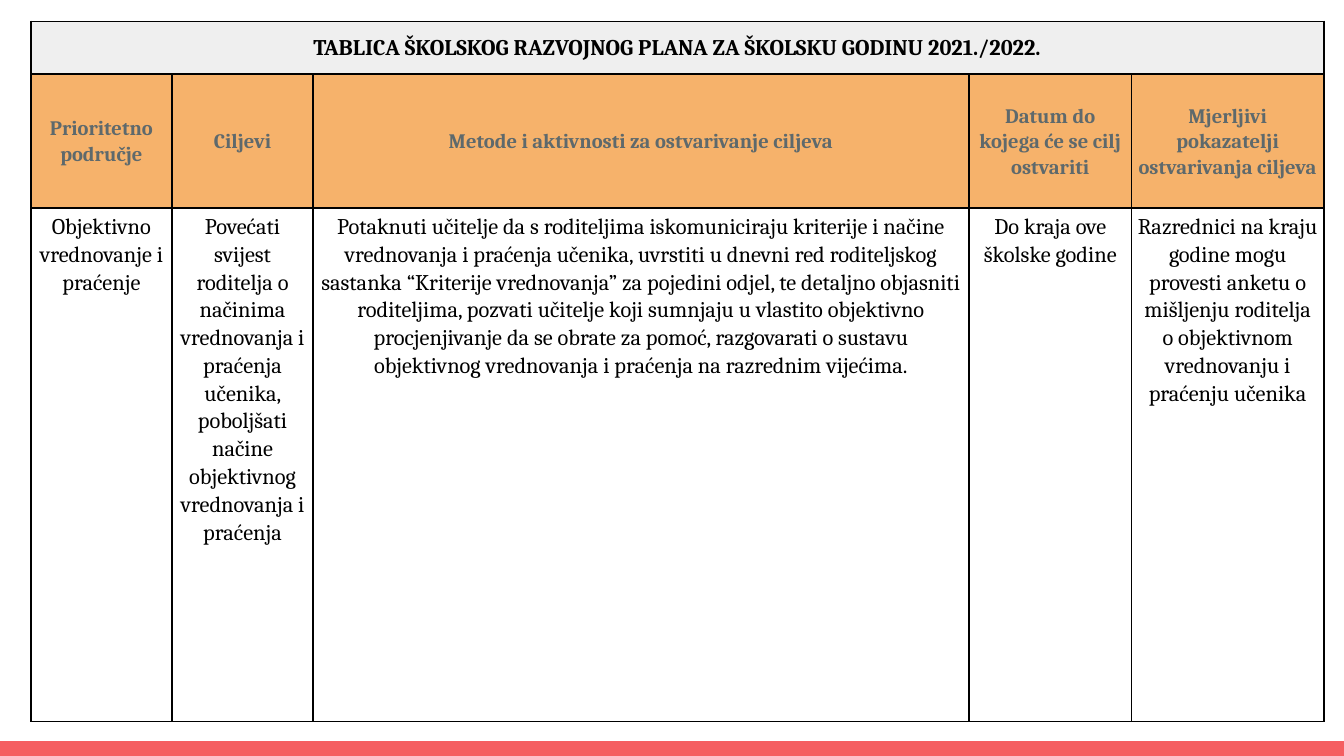
from dataclasses import dataclass

from lxml import etree
from pptx import Presentation, util as u
from pptx.dml.color import RGBColor
from pptx.enum import shapes, text
from pptx.oxml.ns import qn


@dataclass(frozen=True)
class Theme:
    """Colours, font and type sizes of the slide."""
    font: str = "Cambria"
    ink: str = "000000"
    muted: str = "5E696C"
    banner: str = "EFEFEF"
    heading: str = "F6B26B"
    paper: str = "FFFFFF"
    accent: str = "F55E61"
    body_size: float = 12
    heading_size: float = 11
    border: float = 1


THEME = Theme()
WIDTH = 10
HEIGHT = WIDTH * 9 / 16
LEFT, TOP = 0.23, 0.16
COLUMNS = (1.05, 1.05, 4.88, 1.21, 1.43)
ROWS = (0.39, 1, 3.82)
STRIP = 0.11

TITLE = "TABLICA ŠKOLSKOG RAZVOJNOG PLANA ZA ŠKOLSKU GODINU 2021./2022."
HEADINGS = (
    "Prioritetno područje",
    "Ciljevi",
    "Metode i aktivnosti za ostvarivanje ciljeva",
    "Datum do kojega će se cilj ostvariti",
    "Mjerljivi pokazatelji ostvarivanja ciljeva",
)
PLAN = (
    "Objektivno vrednovanje i praćenje",
    "Povećati svijest roditelja o načinima vrednovanja i praćenja učenika, "
    "poboljšati načine objektivnog vrednovanja i praćenja",
    "Potaknuti učitelje da s roditeljima iskomuniciraju kriterije i načine "
    "vrednovanja i praćenja učenika, uvrstiti u dnevni red roditeljskog "
    "sastanka “Kriterije vrednovanja” za pojedini odjel, te detaljno objasniti "
    "roditeljima, pozvati učitelje koji sumnjaju u vlastito objektivno "
    "procjenjivanje da se obrate za pomoć, razgovarati o sustavu objektivnog "
    "vrednovanja i praćenja na razrednim vijećima.",
    "Do kraja ove školske godine",
    "Razrednici na kraju godine mogu provesti anketu o mišljenju roditelja "
    "o objektivnom vrednovanju i praćenju učenika",
)


def add_strip(slide):
    """Draw the coloured strip along the bottom edge."""
    strip = slide.shapes.add_shape(
        shapes.MSO_SHAPE.RECTANGLE, 0, u.Inches(HEIGHT - STRIP),
        u.Inches(WIDTH), u.Inches(STRIP))
    strip.shadow.inherit = False
    strip.fill.solid()
    strip.fill.fore_color.rgb = RGBColor.from_string(THEME.accent)
    strip.line.fill.background()


def add_grid(slide):
    """Add the empty plan table with its column and row sizes."""
    grid = slide.shapes.add_table(
        len(ROWS), len(COLUMNS), u.Inches(LEFT), u.Inches(TOP),
        u.Inches(sum(COLUMNS)), u.Inches(sum(ROWS))).table
    grid.first_row = grid.horz_banding = False
    for column, width in zip(grid.columns, COLUMNS):
        column.width = u.Inches(width)
    for row, height in zip(grid.rows, ROWS):
        row.height = u.Inches(height)
    return grid


def style_cell(cell, fill):
    """Give a cell its borders, fill and margins."""
    properties = cell._tc.get_or_add_tcPr()
    for side in ("a:lnL", "a:lnR", "a:lnT", "a:lnB"):
        edge = etree.SubElement(properties, qn(side), w=str(u.Pt(THEME.border)))
        paint = etree.SubElement(edge, qn("a:solidFill"))
        etree.SubElement(paint, qn("a:srgbClr"), val=THEME.ink)
    cell.fill.solid()
    cell.fill.fore_color.rgb = RGBColor.from_string(fill)
    cell.margin_left = cell.margin_right = u.Inches(0.04)
    cell.margin_top = cell.margin_bottom = u.Inches(0.03)


def write_cell(cell, words, size, color, bold, anchor):
    """Write one centred paragraph into a cell."""
    cell.vertical_anchor = anchor
    paragraph = cell.text_frame.paragraphs[0]
    paragraph.alignment = text.PP_ALIGN.CENTER
    paragraph.line_spacing = 1.08
    paragraph.space_after = u.Pt(8)
    run = paragraph.add_run()
    run.text = words
    run.font.name = THEME.font
    run.font.size = u.Pt(size)
    run.font.bold = bold
    run.font.color.rgb = RGBColor.from_string(color)


def fill_row(grid, index, entries, fill, **style):
    """Style a whole row and write its entries from the left."""
    for column in range(len(COLUMNS)):
        style_cell(grid.cell(index, column), fill)
    for column, words in enumerate(entries):
        write_cell(grid.cell(index, column), words, **style)


def main():
    """Build the development plan slide and save it."""
    deck = Presentation()
    deck.slide_width, deck.slide_height = u.Inches(WIDTH), u.Inches(HEIGHT)
    slide = deck.slides.add_slide(deck.slide_layouts[6])
    add_strip(slide)
    grid = add_grid(slide)
    grid.cell(0, 0).merge(grid.cell(0, len(COLUMNS) - 1))
    middle, top = text.MSO_ANCHOR.MIDDLE, text.MSO_ANCHOR.TOP
    fill_row(grid, 0, (TITLE,), THEME.banner, size=THEME.body_size,
             color=THEME.ink, bold=True, anchor=middle)
    fill_row(grid, 1, HEADINGS, THEME.heading, size=THEME.heading_size,
             color=THEME.muted, bold=True, anchor=middle)
    fill_row(grid, 2, PLAN, THEME.paper, size=THEME.body_size,
             color=THEME.ink, bold=False, anchor=top)
    deck.save("out.pptx")


if __name__ == "__main__":
    main()
